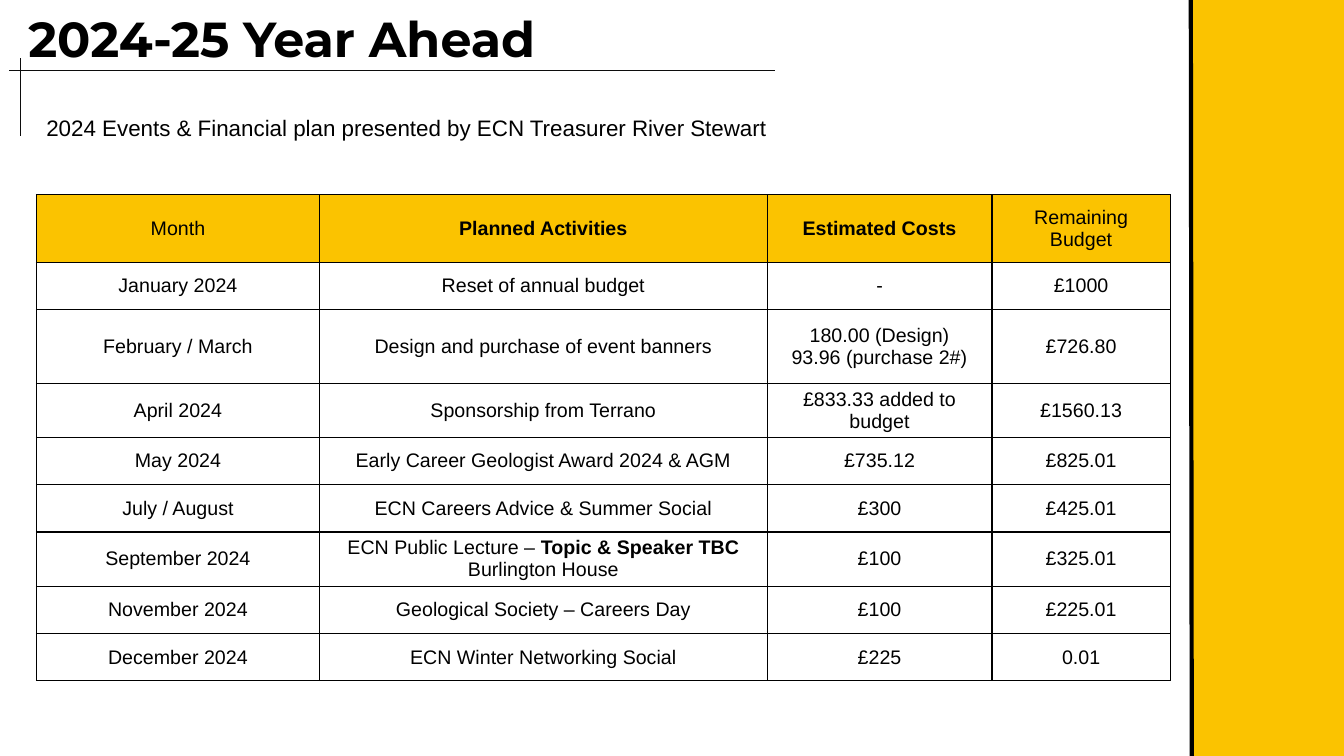
import pptx
import pptx.util
import pptx.dml.color
import pptx.enum.shapes
import pptx.enum.text
import pptx.oxml
import pptx.oxml.ns
from lxml import etree

Pt = pptx.util.Pt
COLOURS = {"black": "000000", "rule": "0C0C0C", "yellow": "FBC300"}
COLUMN_WIDTHS = [202.3, 319.7, 160.6, 127.4]
ROW_HEIGHT = 33.8
SPECIAL_HEIGHTS = {0: 48.4, 2: 52.6, 3: 38.6, 6: 38.6}
BOLD_TEXTS = {"Planned Activities", "Estimated Costs", "Topic & Speaker TBC"}
ROWS = [
    ["Month", "Planned Activities", "Estimated Costs", "Remaining Budget"],
    ["January 2024", "Reset of annual budget", "-", "£1000"],
    ["February / March", "Design and purchase of event banners",
     ["180.00 (Design)", "93.96 (purchase 2#)"], "£726.80"],
    ["April 2024", "Sponsorship from Terrano", "£833.33 added to budget", "£1560.13"],
    ["May 2024", "Early Career Geologist Award 2024 & AGM", "£735.12", "£825.01"],
    ["July / August", "ECN Careers Advice & Summer Social", "£300", "£425.01"],
    ["September 2024",
     [["ECN Public Lecture – ", "Topic & Speaker TBC"], "Burlington House"],
     "£100", "£325.01"],
    ["November 2024", "Geological Society – Careers Day", "£100", "£225.01"],
    ["December 2024", "ECN Winter Networking Social", "£225", "0.01"],
]


def colour(name):
    """Return the named colour as an RGB value."""
    return pptx.dml.color.RGBColor.from_string(COLOURS[name])


def add_text_run(paragraph, text, size, font_name="Arial", bold=False):
    """Add one formatted run to a paragraph."""
    run = paragraph.add_run()
    run.text = text
    run.font.name = font_name
    run.font.size = Pt(size)
    run.font.bold = bold
    run.font.color.rgb = colour("black")


def add_line(slide, start, end, colour_name, width):
    """Draw a plain straight line between two points."""
    connector = slide.shapes.add_connector(
        pptx.enum.shapes.MSO_CONNECTOR.STRAIGHT, *map(Pt, start + end))
    connector.line.color.rgb = colour(colour_name)
    connector.line.width = Pt(width)
    etree.SubElement(connector._element.spPr, pptx.oxml.ns.qn("a:effectLst"))


def add_side_band(slide, left, top, width, height):
    """Fill the side band and draw the heavy line along its left edge."""
    band = slide.shapes.add_shape(
        pptx.enum.shapes.MSO_SHAPE.RECTANGLE, Pt(left), Pt(top), Pt(width), Pt(height))
    band.shadow.inherit = False
    band.fill.solid()
    band.fill.fore_color.rgb = colour("yellow")
    band.line.fill.background()
    add_line(slide, (left - 0.7, top + height), (left - 1.4, top), "black", 3)


def add_title(slide, left, top, width, height):
    """Place the title with the crossed rules at its lower left."""
    title = slide.shapes.title
    title.left, title.top, title.width, title.height = map(Pt, (left, top, width, height))
    frame = title.text_frame
    frame.word_wrap = True
    frame.auto_size = pptx.enum.text.MSO_AUTO_SIZE.NONE
    frame.vertical_anchor = pptx.enum.text.MSO_ANCHOR.BOTTOM
    paragraph = frame.paragraphs[0]
    paragraph.alignment = pptx.enum.text.PP_ALIGN.LEFT
    paragraph.line_spacing = 0.9
    paragraph.space_before = Pt(0)
    add_text_run(paragraph, "2024-25 Year Ahead", 35.1, "Montserrat", True)
    rule_top = top + height - 2.2
    add_line(slide, (left - 6.5, rule_top), (left + 540.7, rule_top), "rule", 0.75)
    add_line(slide, (left + 1.4, rule_top - 8.6), (left + 1.4, rule_top + 46.8), "rule", 0.75)


def add_subtitle(slide, left, top, width, height):
    """Place the line that introduces the plan."""
    frame = slide.shapes.add_textbox(Pt(left), Pt(top), Pt(width), Pt(height)).text_frame
    frame.word_wrap = True
    add_text_run(frame.paragraphs[0],
                 "2024 Events & Financial plan presented by ECN Treasurer River Stewart", 16)


def add_borders(cell):
    """Give a cell thin lines on all four sides."""
    properties = cell._tc.get_or_add_tcPr()
    for side in ("lnL", "lnR", "lnT", "lnB"):
        properties.append(pptx.oxml.parse_xml(
            f'<a:{side} {pptx.oxml.ns.nsdecls("a")} w="12700"><a:solidFill>'
            f'<a:srgbClr val="{COLOURS["black"]}"/></a:solidFill></a:{side}>'))


def fill_cell(cell, content, is_header):
    """Write centred lines into a cell and format it."""
    cell.vertical_anchor = pptx.enum.text.MSO_ANCHOR.MIDDLE
    add_borders(cell)
    if is_header:
        cell.fill.solid()
        cell.fill.fore_color.rgb = colour("yellow")
    else:
        cell.fill.background()
    lines = content if isinstance(content, list) else [content]
    for index, line in enumerate(lines):
        frame = cell.text_frame
        paragraph = frame.add_paragraph() if index else frame.paragraphs[0]
        paragraph.alignment = pptx.enum.text.PP_ALIGN.CENTER
        for text in line if isinstance(line, list) else [line]:
            add_text_run(paragraph, text, 14, bold=text in BOLD_TEXTS)


def add_plan_table(slide, left, top):
    """Build the table of activities, costs and budget."""
    heights = [SPECIAL_HEIGHTS.get(index, ROW_HEIGHT) for index in range(len(ROWS))]
    table = slide.shapes.add_table(
        len(ROWS), len(COLUMN_WIDTHS), Pt(left), Pt(top),
        Pt(sum(COLUMN_WIDTHS)), Pt(sum(heights))).table
    table.first_row = False
    table.horz_banding = False
    for column, width in zip(table.columns, COLUMN_WIDTHS):
        column.width = Pt(width)
    for row_index, (row, height) in enumerate(zip(table.rows, heights)):
        row.height = Pt(height)
        for cell, content in zip(row.cells, ROWS[row_index]):
            fill_cell(cell, content, row_index == 0)


def add_year_plan_slide(presentation):
    """Add the slide with the plan for the year."""
    slide = presentation.slides.add_slide(presentation.slide_layouts[5])
    add_side_band(slide, 852, 0, 108, 540)
    add_title(slide, 13, -3.6, 794.2, 56.2)
    add_plan_table(slide, 26, 139)
    add_subtitle(slide, 26, 77.8, 558, 26.6)


def main():
    """Build and save the presentation."""
    presentation = pptx.Presentation()
    presentation.slide_width = Pt(960)
    presentation.slide_height = Pt(540)
    add_year_plan_slide(presentation)
    presentation.save("out.pptx")


if __name__ == "__main__":
    main()
